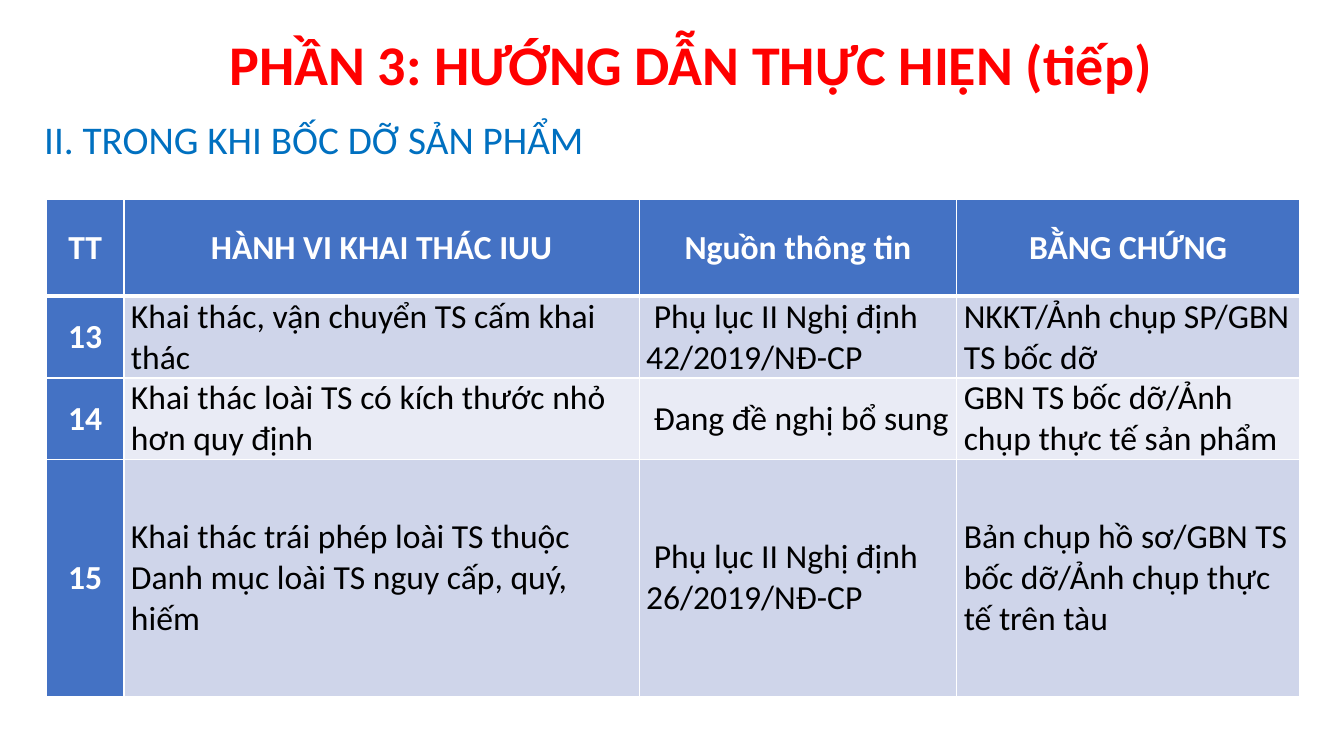
from lxml.etree import SubElement
from pptx import Presentation
from pptx.dml.color import RGBColor
from pptx.enum.text import MSO_ANCHOR as Anchor, PP_ALIGN as Align
from pptx.oxml.ns import qn
from pptx.util import Inches, Pt

FONT = "Calibri"
WHITE, BLACK, BLUE = "FFFFFF", "000000", "4472C4"
BANDS = ("CFD5EA", "E9EBF5")
COLUMN_WIDTHS = (0.77, 5.11, 3.15, 3.4)
ROW_HEIGHTS = (0.96, 0.81, 0.81, 2.35)
ROWS = (
    ("TT", "HÀNH VI KHAI THÁC IUU", "Nguồn thông tin", "BẰNG CHỨNG"),
    ("13", "Khai thác, vận chuyển TS cấm khai thác",
     " Phụ lục II Nghị định 42/2019/NĐ-CP", "NKKT/Ảnh chụp SP/GBN TS bốc dỡ"),
    ("14", "Khai thác loài TS có kích thước nhỏ hơn quy định",
     " Đang đề nghị bổ sung", "GBN TS bốc dỡ/Ảnh chụp thực tế sản phẩm"),
    ("15", "Khai thác trái phép loài TS thuộc Danh mục loài TS nguy cấp, quý, hiếm",
     " Phụ lục II Nghị định 26/2019/NĐ-CP",
     "Bản chụp hồ sơ/GBN TS bốc dỡ/Ảnh chụp thực tế trên tàu"),
)


def rgb(color):
    """Turn a hex string into a colour."""
    return RGBColor.from_string(color)


def style_paragraph(para, size, color, bold, align, before):
    """Set the font, alignment and space before of a paragraph."""
    para.alignment = align
    para.space_before = Pt(before)
    para.font.name = FONT
    para.font.size = Pt(size)
    para.font.bold = bold
    para.font.color.rgb = rgb(color)


def add_heading(page, text, bounds, size, color, bold=False, align=Align.LEFT,
                anchor=Anchor.TOP, before=0):
    """Add a wrapped one-line heading."""
    box = page.shapes.add_textbox(*map(Inches, bounds))
    frame = box.text_frame
    frame.word_wrap = True
    frame.vertical_anchor = anchor
    para = frame.paragraphs[0]
    para.text = text
    para.line_spacing = 0.9
    style_paragraph(para, size, color, bold, align, before)


def add_borders(cell, top, bottom):
    """Draw white borders round a cell, with widths in points."""
    properties = cell._tc.get_or_add_tcPr()
    for side, width in (("L", 1), ("R", 1), ("T", top), ("B", bottom)):
        line = SubElement(properties, qn(f"a:ln{side}"), w=str(Pt(width)))
        fill = SubElement(line, qn("a:solidFill"))
        SubElement(fill, qn("a:srgbClr"), val=WHITE)


def fill_cell(cell, text, row, column):
    """Write and style one cell by its place in the table."""
    heading = row == 0 or column == 0
    add_borders(cell, 3 if row == 1 else 1, 3 if row == 0 else 1)
    cell.fill.solid()
    cell.fill.fore_color.rgb = rgb(BLUE if heading else BANDS[(row - 1) % 2])
    cell.vertical_anchor = Anchor.MIDDLE
    cell.margin_left = cell.margin_right = Inches(0.07 if row else 0.06)
    cell.margin_top = cell.margin_bottom = 0
    cell.text = text
    style_paragraph(cell.text_frame.paragraphs[0], 24, WHITE if heading else BLACK,
                    heading, Align.CENTER if heading else Align.LEFT, 6)


def add_violation_table(page):
    """Add the table of fishing violations."""
    bounds = (0.46, 1.98, sum(COLUMN_WIDTHS), sum(ROW_HEIGHTS))
    table = page.shapes.add_table(len(ROWS), len(COLUMN_WIDTHS),
                                  *map(Inches, bounds)).table
    for column, width in zip(table.columns, COLUMN_WIDTHS):
        column.width = Inches(width)
    for row, height in zip(table.rows, ROW_HEIGHTS):
        row.height = Inches(height)
    for row, texts in enumerate(ROWS):
        for column, text in enumerate(texts):
            fill_cell(table.cell(row, column), text, row, column)


def main():
    """Build and save the slide."""
    deck = Presentation()
    deck.slide_width, deck.slide_height = Inches(13.33), Inches(7.5)
    page = deck.slides.add_slide(deck.slide_layouts[6])
    add_heading(page, "PHẦN 3: HƯỚNG DẪN THỰC HIỆN (tiếp)", (1.1, 0.19, 11.5, 0.96),
                40, "FF0000", True, Align.CENTER, Anchor.MIDDLE)
    add_heading(page, "II. TRONG KHI BỐC DỠ SẢN PHẨM", (0.34, 1.15, 7.93, 0.66),
                28, "0070C0", before=10)
    add_violation_table(page)
    deck.save("out.pptx")


if __name__ == "__main__":
    main()
